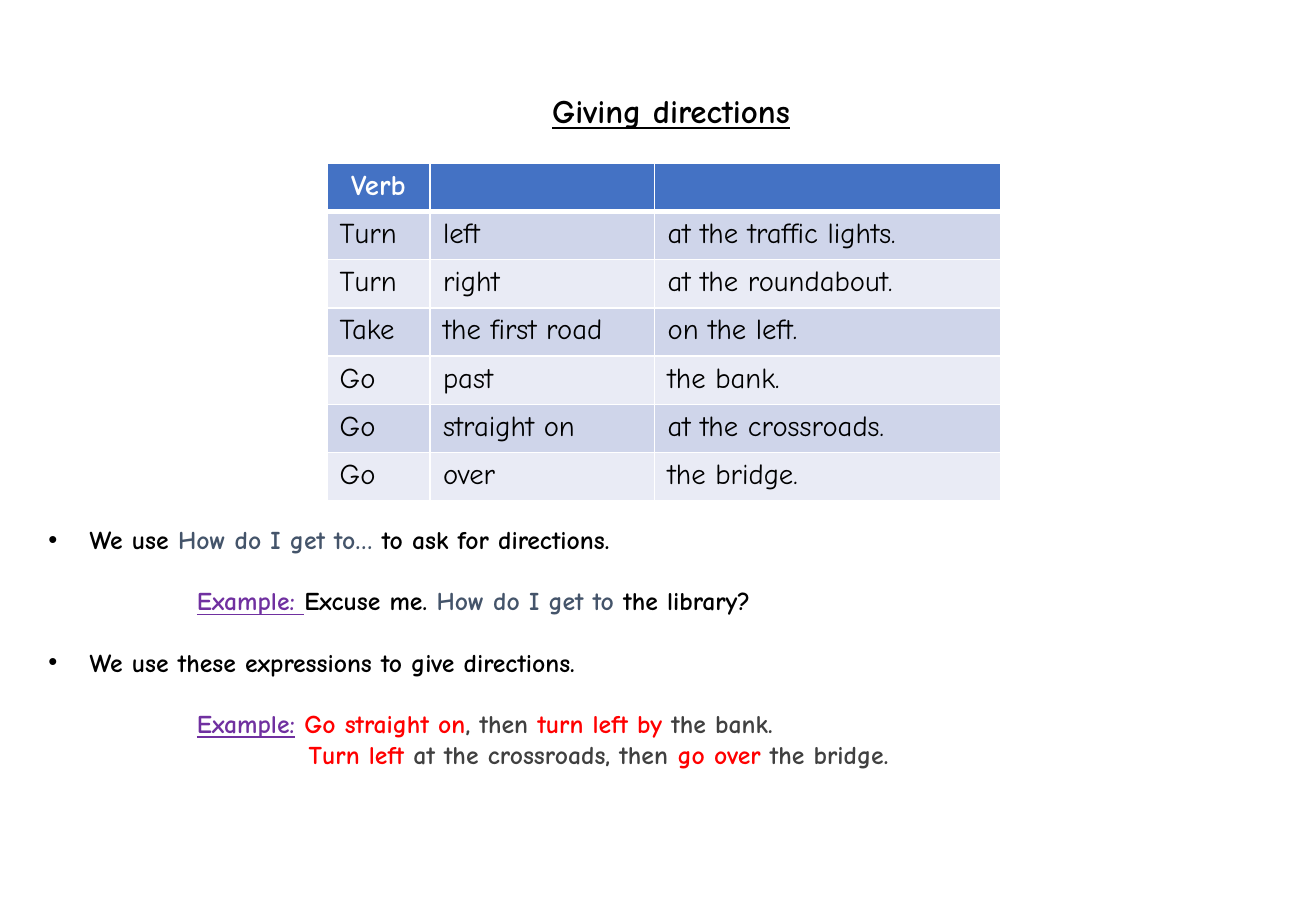
"""Build the "Giving directions" grammar slide."""
from dataclasses import dataclass

from lxml import etree
from pptx import Presentation
from pptx.dml.color import RGBColor
from pptx.enum.text import PP_ALIGN
from pptx.oxml.ns import qn
from pptx.util import Pt

CENTER, LEFT = PP_ALIGN.CENTER, PP_ALIGN.LEFT


@dataclass(frozen=True)
class Theme:
    font: str = "Comic Neue"
    title_size: float = 19.5
    table_size: float = 17
    body_size: float = 15.2
    black: str = "000000"
    white: str = "FFFFFF"
    question: str = "44546A"
    example: str = "7030A0"
    direction: str = "FF0000"
    detail: str = "404040"
    header: str = "4472C4"
    bands: tuple = ("CFD5EA", "E9EBF5")


class DirectionsSlide:
    def __init__(self, slide, theme):
        self.slide = slide
        self.theme = theme

    def run(self, paragraph, text, size, color, bold=True, underline=False):
        run = paragraph.add_run()
        run.text = text
        font = run.font
        font.name, font.size = self.theme.font, Pt(size)
        font.bold, font.underline = bold, underline
        font.color.rgb = RGBColor.from_string(color)

    def text_frame(self, left, top, width, height):
        box = self.slide.shapes.add_textbox(Pt(left), Pt(top), Pt(width), Pt(height))
        box.text_frame.word_wrap = True
        return box.text_frame

    def title(self, text, *area):
        paragraph = self.text_frame(*area).paragraphs[0]
        paragraph.alignment = CENTER
        self.run(paragraph, text, self.theme.title_size, self.theme.black, underline=True)

    def rules(self, lines, *area):
        frame = self.text_frame(*area)
        for number, (indent, bulleted, gap, pieces) in enumerate(lines):
            paragraph = frame.add_paragraph() if number else frame.paragraphs[0]
            paragraph.space_before = Pt(gap)
            properties = paragraph._p.get_or_add_pPr()
            properties.set("marL", str(Pt(indent)))
            properties.set("indent", str(Pt(-indent if bulleted else 0)))
            if bulleted:
                etree.SubElement(properties, qn("a:buFont"), typeface="Arial")
                etree.SubElement(properties, qn("a:buChar"), char="•")
            for text, color in pieces:
                self.run(paragraph, text, self.theme.body_size, color,
                         underline=color == self.theme.example)

    def border(self, cell, side, width):
        line = etree.SubElement(cell._tc.get_or_add_tcPr(), qn(f"a:ln{side}"), w=str(Pt(width)))
        fill = etree.SubElement(line, qn("a:solidFill"))
        etree.SubElement(fill, qn("a:srgbClr"), val=self.theme.white)

    def cell(self, cell, text, row):
        theme, heading = self.theme, row == 0
        cell.margin_left = cell.margin_right = Pt(7.7)
        cell.margin_top = cell.margin_bottom = Pt(3.6)
        widths = {"L": 1, "R": 1, "T": 3 if row == 1 else 1, "B": 3 if heading else 1}
        for side, width in widths.items():
            self.border(cell, side, width)
        cell.fill.solid()
        fill = theme.header if heading else theme.bands[(row - 1) % 2]
        cell.fill.fore_color.rgb = RGBColor.from_string(fill)
        paragraph = cell.text_frame.paragraphs[0]
        paragraph.alignment = CENTER if heading else LEFT
        if text:
            self.run(paragraph, text, theme.table_size,
                     theme.white if heading else theme.black, bold=heading)
        else:
            etree.SubElement(paragraph._p, qn("a:endParaRPr"), sz=str(theme.table_size * 100))

    def table(self, rows, left, top, column_widths, row_height):
        table = self.slide.shapes.add_table(
            len(rows), len(column_widths), Pt(left), Pt(top),
            Pt(sum(column_widths)), Pt(row_height * len(rows))).table
        for column, width in zip(table.columns, column_widths):
            column.width = Pt(width)
        for row, texts in enumerate(rows):
            table.rows[row].height = Pt(row_height)
            for column, text in enumerate(texts):
                self.cell(table.cell(row, column), text, row)


def main():
    presentation = Presentation()
    presentation.slide_width, presentation.slide_height = Pt(780), Pt(540)
    theme = Theme()
    page = DirectionsSlide(presentation.slides.add_slide(presentation.slide_layouts[6]), theme)

    page.title("Giving directions", 21.6, 50.4, 752.4, 31)
    page.table([
        ("Verb", "", ""),
        ("Turn", "left", "at the traffic lights."),
        ("Turn", "right", "at the roundabout."),
        ("Take", "the first road", "on the left."),
        ("Go", "past", "the bank."),
        ("Go", "straight on", "at the crossroads."),
        ("Go", "over", "the bridge."),
    ], 193.7, 96.8, (61.2, 133.2, 205.2), 28.6)

    rule_indent, example_indent, answer_indent, gap = 24.5, 88, 154.3, 18.1
    page.rules([
        (rule_indent, True, 0, [
            ("We use ", theme.black), ("How do I get to… ", theme.question),
            ("to ask for directions.", theme.black)]),
        (example_indent, False, gap, [
            ("Example: ", theme.example), ("Excuse me. ", theme.black),
            ("How do I get to ", theme.question), ("the library?", theme.black)]),
        (rule_indent, True, gap, [
            ("We use these expressions to give directions.", theme.black)]),
        (example_indent, False, gap, [
            ("Example:", theme.example), (" Go straight on", theme.direction),
            (", then ", theme.detail), ("turn left by ", theme.direction),
            ("the bank.", theme.detail)]),
        (answer_indent, False, 0, [
            ("Turn left ", theme.direction), ("at the crossroads, then ", theme.detail),
            ("go over", theme.direction), (" the bridge.", theme.detail)]),
    ], 21.6, 307, 752.4, 157.4)
    presentation.save("out.pptx")


if __name__ == "__main__":
    main()
